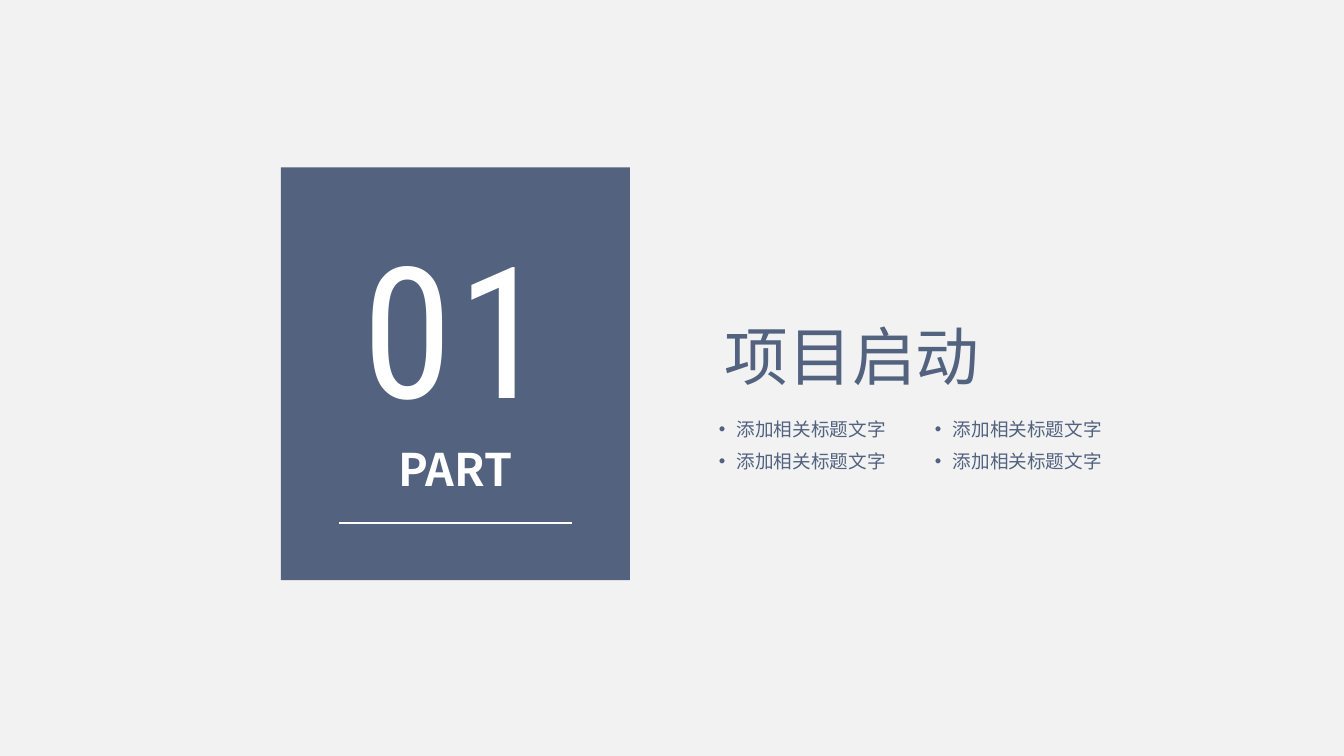
from lxml.etree import SubElement
from pptx import Presentation
from pptx.dml.color import RGBColor
from pptx.enum.shapes import MSO_CONNECTOR, MSO_SHAPE
from pptx.enum.text import MSO_ANCHOR, MSO_AUTO_SIZE, PP_ALIGN
from pptx.oxml.ns import qn
from pptx.util import Pt

SLATE = RGBColor(0x52, 0x62, 0x7F)
WHITE = RGBColor(0xFF, 0xFF, 0xFF)
PALE = RGBColor(0xF2, 0xF2, 0xF2)
SANS = "Noto Sans CJK SC"


def write(box, text, size, color, font=SANS, bold=False, align=PP_ALIGN.LEFT, inset=0):
    frame = box.text_frame
    frame.word_wrap = True
    frame.auto_size = MSO_AUTO_SIZE.SHAPE_TO_FIT_TEXT
    frame.vertical_anchor = MSO_ANCHOR.TOP
    frame.margin_left = frame.margin_right = Pt(2 * inset)
    frame.margin_top = frame.margin_bottom = Pt(inset)
    paragraph = frame.paragraphs[0]
    paragraph.alignment = align
    run = paragraph.add_run()
    run.text = text
    run.font.size = Pt(size)
    run.font.name = font
    run.font.bold = bold
    run.font.color.rgb = color
    SubElement(run.font._element, qn("a:ea"), typeface=font)
    return paragraph


prs = Presentation()
prs.slide_width, prs.slide_height = Pt(1012.32), Pt(569.52)
slide = prs.slides.add_slide(prs.slide_layouts[5])
slide.background.fill.solid()
slide.background.fill.fore_color.rgb = PALE
shapes = slide.shapes

panel = shapes.add_shape(MSO_SHAPE.RECTANGLE, Pt(211.5), Pt(126), Pt(263), Pt(311))
panel.shadow.inherit = False
panel.fill.solid()
panel.fill.fore_color.rgb = SLATE
panel.line.fill.background()

underline = shapes.add_connector(
    MSO_CONNECTOR.STRAIGHT, Pt(255.5), Pt(393.8), Pt(430.5), Pt(393.8))
underline.line.color.rgb = WHITE
underline.line.width = Pt(1.5)
SubElement(underline._element.spPr, qn("a:effectLst"))

part_label = shapes.add_textbox(Pt(246.5), Pt(332.6), Pt(193), Pt(41))
write(part_label, "PART", 33.8, WHITE, bold=True, align=PP_ALIGN.CENTER)

title = shapes.title
title.left, title.top, title.width, title.height = Pt(545.8), Pt(239), Pt(340), Pt(58.3)
write(title, "项目启动", 48, SLATE)

part_number = shapes.add_textbox(Pt(257), Pt(158.4), Pt(172), Pt(174.2))
number = write(part_number, "01", 138, WHITE, font="Roboto Condensed",
               align=PP_ALIGN.CENTER, inset=3.6)
number.runs[0].font._element.set("spc", "300")
space_before = SubElement(number._p.get_or_add_pPr(), qn("a:spcBef"))
SubElement(space_before, qn("a:spcPct"), val="20000")

for top in (314.6, 339.1):
    for left in (541.4, 704.2):
        topic = shapes.add_textbox(Pt(left), Pt(top), Pt(144.7), Pt(17.3))
        entry = write(topic, "添加相关标题文字", 14, SLATE)
        entry.level = 1
        properties = entry._p.get_or_add_pPr()
        properties.set("marL", str(Pt(13.5)))
        properties.set("indent", str(-Pt(13.5)))
        SubElement(properties, qn("a:buFont"), typeface="Arial")
        SubElement(properties, qn("a:buChar"), char="•")

prs.save("out.pptx")
